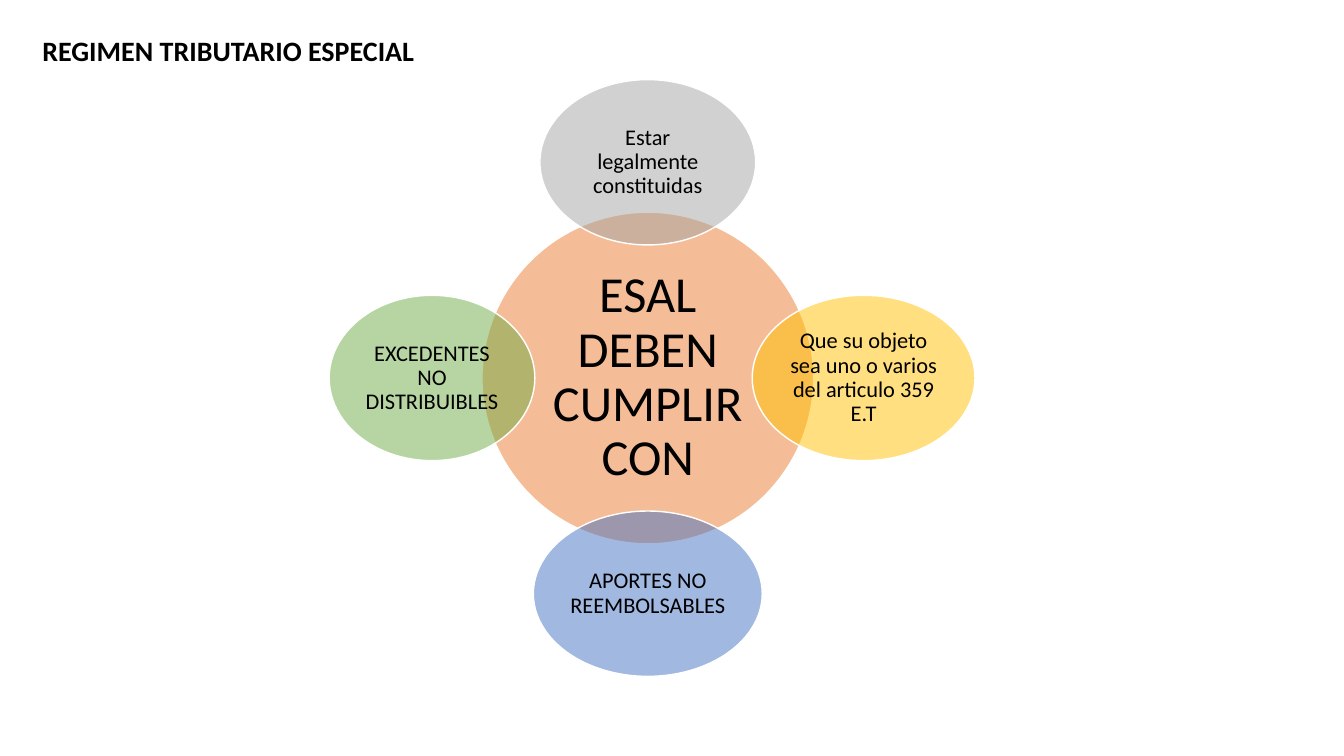
from lxml.etree import SubElement
from pptx import Presentation
from pptx.dml.color import RGBColor
from pptx.enum.shapes import MSO_SHAPE
from pptx.enum.text import MSO_ANCHOR, MSO_AUTO_SIZE, PP_ALIGN
from pptx.oxml.ns import qn
from pptx.util import Inches, Pt

BLACK = RGBColor(0x00, 0x00, 0x00)
WHITE = RGBColor(0xFF, 0xFF, 0xFF)
ORANGE = RGBColor(0xED, 0x7D, 0x31)
GRAY = RGBColor(0xA5, 0xA5, 0xA5)
YELLOW = RGBColor(0xFF, 0xC0, 0x00)
BLUE = RGBColor(0x44, 0x72, 0xC4)
GREEN = RGBColor(0x70, 0xAD, 0x47)

SLIDE_W, SLIDE_H = 13.33, 7.5
HUB_SIZE = 3.29
ORBIT = 2.14
SATELLITE_H = 1.64
SATELLITES = [
    ("Estar legalmente constituidas", GRAY, 0, -1, 2.14),
    ("Que su objeto sea uno o varios del articulo 359 E.T", YELLOW, 1, 0, 2.21),
    ("APORTES NO REEMBOLSABLES", BLUE, 0, 1, 2.27),
    ("EXCEDENTES NO DISTRIBUIBLES", GREEN, -1, 0, 2.04),
]


def write(sp, text, size, bold=False, align=PP_ALIGN.CENTER, anchor=MSO_ANCHOR.MIDDLE,
          inset=(0.02, 0.02), wrap=True, spacing=0.9):
    """Put one formatted paragraph into a shape."""
    tf = sp.text_frame
    tf.auto_size = MSO_AUTO_SIZE.NONE
    tf.word_wrap = wrap
    tf.vertical_anchor = anchor
    tf.margin_left = tf.margin_right = Inches(inset[0])
    tf.margin_top = tf.margin_bottom = Inches(inset[1])
    p = tf.paragraphs[0]
    p.alignment = align
    p.line_spacing = spacing
    r = p.add_run()
    r.text = text
    r.font.name = "Calibri"
    r.font.size = Pt(size)
    r.font.bold = bold
    r.font.color.rgb = BLACK


def add_title(s, text, left, top, width, height):
    """Place the slide title in the given box."""
    sp = s.shapes.title
    sp.left, sp.top, sp.width, sp.height = map(Inches, (left, top, width, height))
    write(sp, text, 20, bold=True, align=PP_ALIGN.LEFT, anchor=MSO_ANCHOR.TOP,
          inset=(0.1, 0.05), wrap=False, spacing=1.0)


def add_bubble(s, text, color, cx, cy, width, height, size, inset):
    """Draw a half-transparent labelled ellipse around a centre."""
    sp = s.shapes.add_shape(MSO_SHAPE.OVAL, Inches(cx - width / 2), Inches(cy - height / 2),
                            Inches(width), Inches(height))
    sp.shadow.inherit = False
    sp.fill.solid()
    sp.fill.fore_color.rgb = color
    clr = sp.fill._xPr.find(qn("a:solidFill"))[0]
    SubElement(clr, qn("a:alpha")).set("val", "50000")
    sp.line.color.rgb = WHITE
    sp.line.width = Pt(1)
    write(sp, text, size, inset=(inset, inset))


def add_radial_diagram(s, cx, cy):
    """Draw the hub and its satellites around a centre."""
    add_bubble(s, "ESAL DEBEN CUMPLIR CON", ORANGE, cx, cy, HUB_SIZE, HUB_SIZE, 36, 0.05)
    for text, color, dx, dy, width in SATELLITES:
        add_bubble(s, text, color, cx + dx * ORBIT, cy + dy * ORBIT,
                   width, SATELLITE_H, 16, 0.02)


def main():
    """Build and save the slide."""
    prs = Presentation()
    prs.slide_width, prs.slide_height = Inches(SLIDE_W), Inches(SLIDE_H)
    s = prs.slides.add_slide(prs.slide_layouts[5])
    add_title(s, "REGIMEN TRIBUTARIO ESPECIAL", 0.32, 0.28, 3.92, 0.44)
    add_radial_diagram(s, SLIDE_W * 0.482, SLIDE_H / 2)
    prs.save("out.pptx")


if __name__ == "__main__":
    main()
